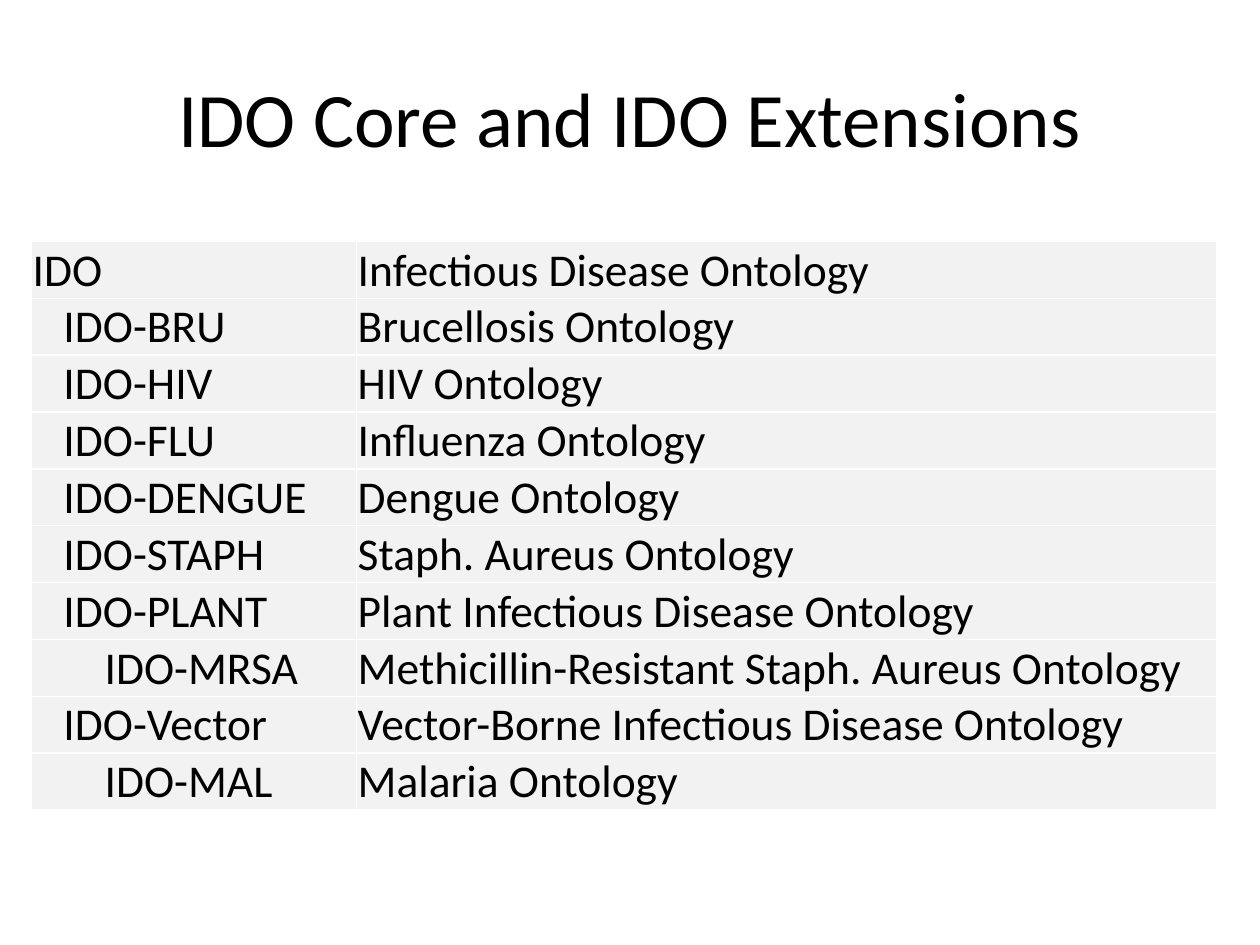
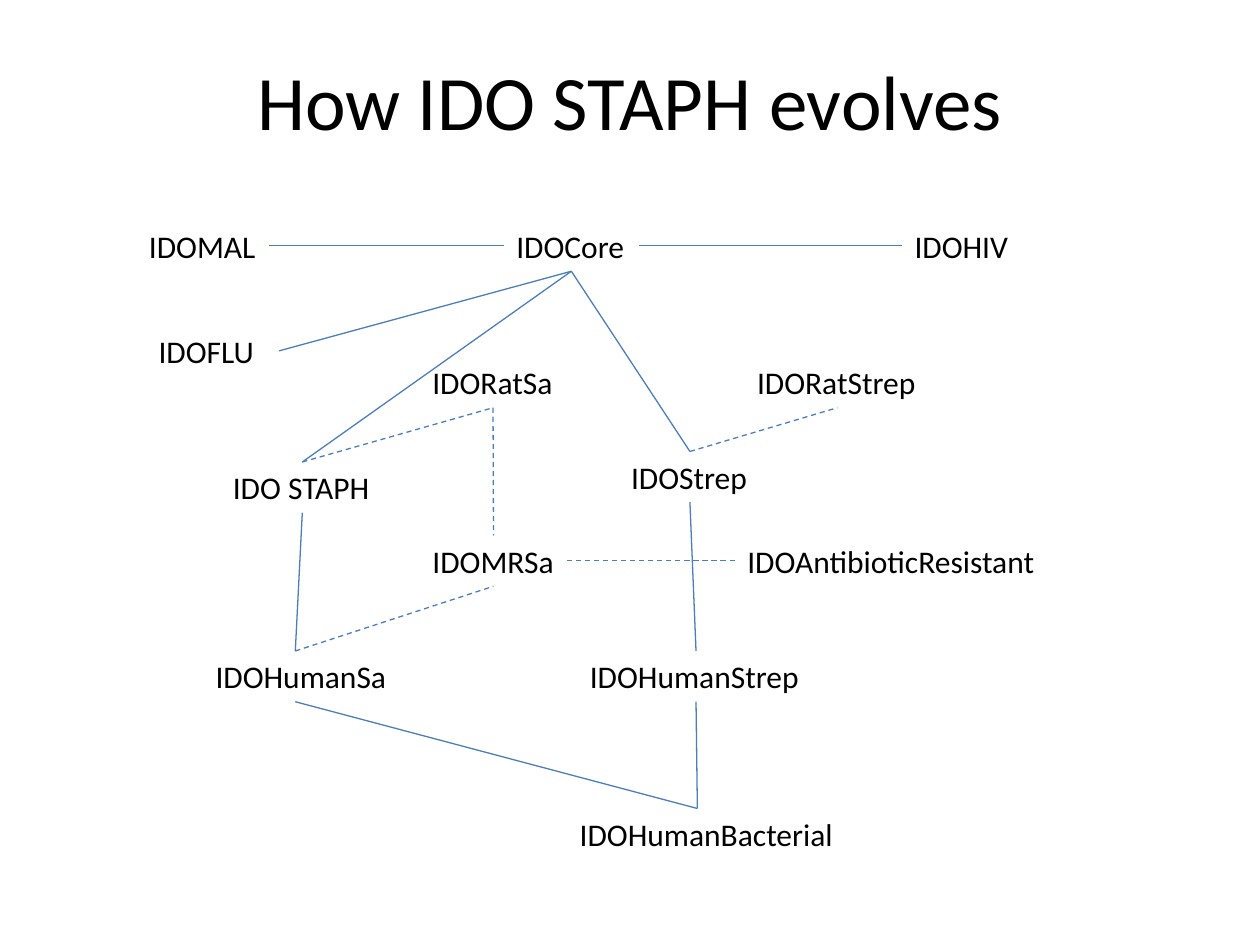
from lxml import etree
from pptx import Presentation
from pptx.dml.color import RGBColor
from pptx.enum.dml import MSO_LINE
from pptx.enum.shapes import MSO_CONNECTOR
from pptx.enum.text import MSO_ANCHOR, MSO_AUTO_SIZE, PP_ALIGN
from pptx.oxml.ns import qn
from pptx.util import Pt

BLACK = RGBColor(0x00, 0x00, 0x00)
CELL_GREY = RGBColor(0xF2, 0xF2, 0xF2)
LINK_BLUE = RGBColor(0x4B, 0x7E, 0xBC)
FONT = "Calibri"

LEFT, CENTER = PP_ALIGN.LEFT, PP_ALIGN.CENTER
MIDDLE, BOTTOM_ANCHOR = MSO_ANCHOR.MIDDLE, MSO_ANCHOR.BOTTOM
GROW = MSO_AUTO_SIZE.SHAPE_TO_FIT_TEXT
STRAIGHT, DASH = MSO_CONNECTOR.STRAIGHT, MSO_LINE.DASH

# Connection sites of a rectangle
TOP, WEST, BOTTOM, EAST = range(4)

COLUMN_WIDTHS = (185.75, 491.75)
ROW_HEIGHT = 32.5
LEVEL_INDENTS = (0, 17.6, 41.1)
# Nesting level, short name, full name
ONTOLOGIES = (
    (0, "IDO", "Infectious Disease Ontology"),
    (1, "IDO-BRU", "Brucellosis Ontology"),
    (1, "IDO-HIV", "HIV Ontology"),
    (1, "IDO-FLU", "Influenza Ontology"),
    (1, "IDO-DENGUE", "Dengue Ontology"),
    (1, "IDO-STAPH", "Staph. Aureus Ontology"),
    (1, "IDO-PLANT", "Plant Infectious Disease Ontology"),
    (2, "IDO-MRSA", "Methicillin-Resistant Staph. Aureus Ontology"),
    (1, "IDO-Vector", "Vector-Borne Infectious Disease Ontology"),
    (2, "IDO-MAL", "Malaria Ontology"),
)

NODE_HEIGHT = 29
# Name, left, top, width, indent
NODES = (
    ("IDOMAL", 78, 126, 76, 0),
    ("IDOCore", 288, 126, 77, 0),
    ("IDOHIV", 515.5, 126, 68, 0),
    ("IDOFLU", 83.5, 186, 76, 0),
    ("IDORatSa", 240, 204, 83.5, 0),
    ("IDORatStrep", 425.5, 204, 106, 0),
    ("IDO STAPH", 126, 264, 93.5, 0),
    ("IDOStrep", 353.5, 258, 81.5, 0),
    ("IDOMRSa", 240, 306, 84, 0),
    ("IDOAntibioticResistant", 420, 306, 180, 0),
    ("IDOHumanSa", 108, 372, 121.5, 8.1),
    ("IDOHumanStrep", 330, 372, 135.5, 0),
    ("IDOHumanBacterial", 312, 462, 173, 12.2),
)
SOLID_LINKS = (
    ("IDOCore", WEST, "IDOMAL", EAST),
    ("IDOHIV", WEST, "IDOCore", EAST),
    ("IDOCore", BOTTOM, "IDOFLU", EAST),
    ("IDOCore", BOTTOM, "IDO STAPH", TOP),
    ("IDOCore", BOTTOM, "IDOStrep", TOP),
    ("IDO STAPH", BOTTOM, "IDOHumanSa", TOP),
    ("IDOStrep", BOTTOM, "IDOHumanStrep", TOP),
    ("IDOHumanSa", BOTTOM, "IDOHumanBacterial", TOP),
    ("IDOHumanStrep", BOTTOM, "IDOHumanBacterial", TOP),
)
DASHED_LINKS = (
    ("IDO STAPH", TOP, "IDORatSa", BOTTOM),
    ("IDOStrep", TOP, "IDORatStrep", BOTTOM),
    ("IDOHumanSa", TOP, "IDOMRSa", BOTTOM),
    ("IDORatSa", BOTTOM, "IDOMRSa", TOP),
    ("IDOMRSa", EAST, "IDOAntibioticResistant", WEST),
)


def write_text(frame, text, size, align=LEFT, indent=0):
    paragraph = frame.paragraphs[0]
    paragraph.alignment = align
    if indent:
        properties = paragraph._p.get_or_add_pPr()
        properties.set("marL", str(Pt(indent)))
        properties.set("indent", "0")
    run = paragraph.add_run()
    run.text = text
    run.font.name = FONT
    run.font.size = Pt(size)
    run.font.color.rgb = BLACK


def add_title(slide, text, top):
    title = slide.shapes.add_textbox(Pt(36), Pt(top), Pt(648), Pt(90))
    title.text_frame.word_wrap = True
    title.text_frame.vertical_anchor = MIDDLE
    write_text(title.text_frame, text, size=44, align=CENTER)


def fill_cell(cell, text, indent=0):
    cell.fill.solid()
    cell.fill.fore_color.rgb = CELL_GREY
    cell.vertical_anchor = BOTTOM_ANCHOR
    cell.margin_left = cell.margin_right = cell.margin_top = Pt(0.7)
    cell.margin_bottom = 0
    write_text(cell.text_frame, text, size=26, indent=indent)


def add_ontology_table(slide):
    table = slide.shapes.add_table(
        len(ONTOLOGIES), len(COLUMN_WIDTHS), Pt(18), Pt(138),
        Pt(sum(COLUMN_WIDTHS)), Pt(ROW_HEIGHT * len(ONTOLOGIES))).table
    table.first_row = False
    table.horz_banding = False
    for column, width in zip(table.columns, COLUMN_WIDTHS):
        column.width = Pt(width)
    for row, (level, short_name, full_name) in zip(table.rows, ONTOLOGIES):
        row.height = Pt(ROW_HEIGHT)
        fill_cell(row.cells[0], short_name, indent=LEVEL_INDENTS[level])
        fill_cell(row.cells[1], full_name)


def add_node(slide, name, left, top, width, indent):
    node = slide.shapes.add_textbox(Pt(left), Pt(top), Pt(width), Pt(NODE_HEIGHT))
    # The box of IDOFLU is wider than its text, so it keeps its width
    node.text_frame.word_wrap = name == "IDOFLU"
    node.text_frame.auto_size = GROW
    write_text(node.text_frame, name, size=18, indent=indent)
    return node


def add_link(slide, start, start_site, end, end_site, dash=None):
    link = slide.shapes.add_connector(STRAIGHT, 0, 0, 0, 0)
    link.begin_connect(start, start_site)
    link.end_connect(end, end_site)
    link.line.color.rgb = LINK_BLUE
    link.line.width = Pt(0.75)
    link.line.dash_style = dash
    etree.SubElement(link._element.spPr, qn("a:effectLst"))


def build_extensions_slide(slide):
    add_title(slide, "IDO Core and IDO Extensions", top=21.6)
    add_ontology_table(slide)


def build_evolution_slide(slide):
    add_title(slide, "How IDO STAPH evolves", top=12)
    nodes = {node[0]: add_node(slide, *node) for node in NODES}
    for links, dash in ((SOLID_LINKS, None), (DASHED_LINKS, DASH)):
        for start, start_site, end, end_site in links:
            add_link(slide, nodes[start], start_site, nodes[end], end_site, dash)


def main():
    deck = Presentation()
    deck.slide_width, deck.slide_height = Pt(720), Pt(540)
    blank = deck.slide_layouts[6]
    for build in (build_extensions_slide, build_evolution_slide):
        build(deck.slides.add_slide(blank))
    deck.save("out.pptx")


if __name__ == "__main__":
    main()
